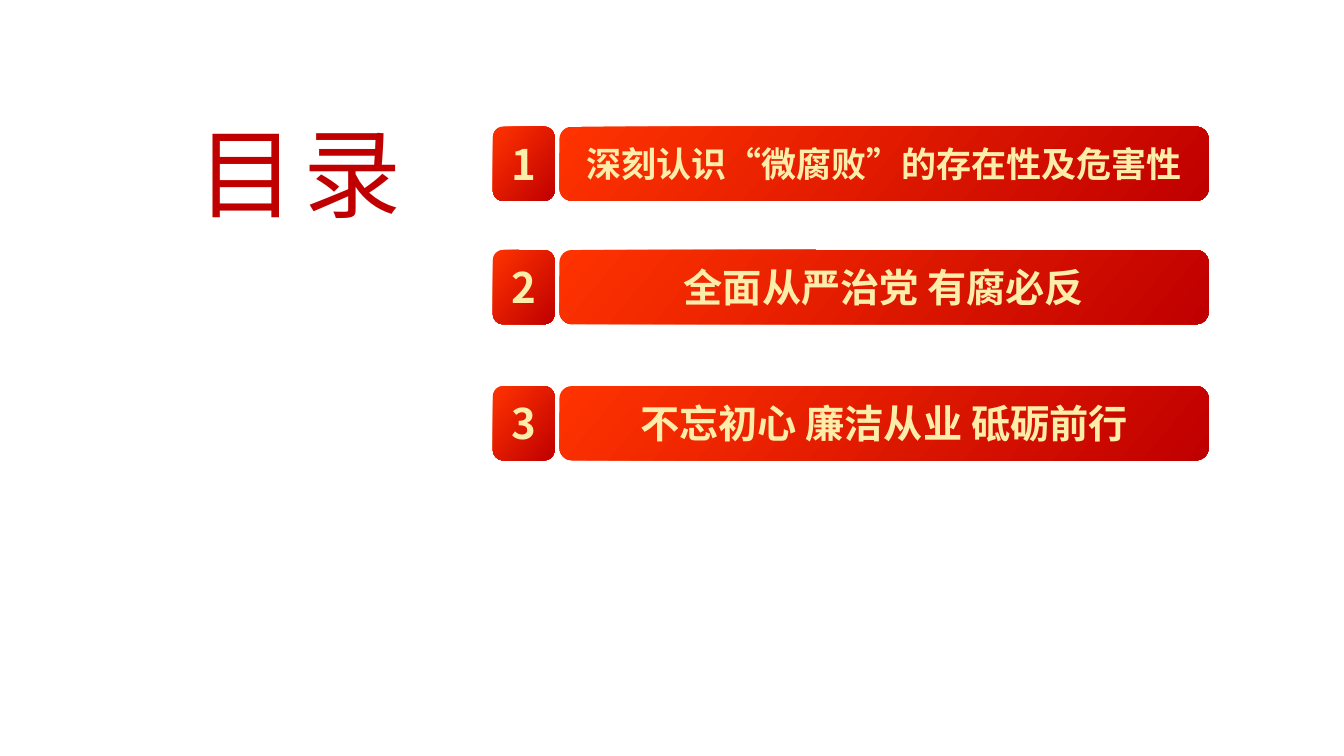
import pptx
import pptx.util
import pptx.dml.color
import pptx.enum.shapes
import pptx.enum.text
import pptx.oxml.ns
from lxml import etree

Pt = pptx.util.Pt
FONT = "Noto Sans CJK SC"


def color(value):
    return pptx.dml.color.RGBColor.from_string(value)


def format_text(paragraph, size, value, bold, alignment):
    paragraph.alignment = alignment
    font = paragraph.font
    font.size = Pt(size)
    font.bold = bold
    font.color.rgb = color(value)
    font.name = FONT
    properties = paragraph._p.pPr.find(pptx.oxml.ns.qn("a:defRPr"))
    etree.SubElement(properties, pptx.oxml.ns.qn("a:ea"), typeface=FONT)
    return properties


presentation = pptx.Presentation()
presentation.slide_width = Pt(960)
presentation.slide_height = Pt(540)
slide = presentation.slides.add_slide(presentation.slide_layouts[5])

title = slide.shapes.title
title.left, title.top, title.width, title.height = Pt(134), Pt(77), Pt(176.4), Pt(92.2)
title.text_frame.text = "目录"
title.text_frame.word_wrap = True
title.text_frame.auto_size = pptx.enum.text.MSO_AUTO_SIZE.NONE
title.text_frame.vertical_anchor = pptx.enum.text.MSO_ANCHOR.TOP
title_properties = format_text(
    title.text_frame.paragraphs[0], 70, "C00000", False, pptx.enum.text.PP_ALIGN.LEFT
)
title_properties.set("spc", "600")

chapters = [
    (90.5, "深刻认识“微腐败”的存在性及危害性", 25),
    (178.6, "全面从严治党 有腐必反", 28),
    (275.8, "不忘初心 廉洁从业 砥砺前行", 28),
]
for number, (top, heading, heading_size) in enumerate(chapters, 1):
    for left, width, text, size in [
        (399.6, 463.7, heading, heading_size),
        (352.1, 44, str(number), 30),
    ]:
        shape = slide.shapes.add_shape(
            pptx.enum.shapes.MSO_SHAPE.ROUNDED_RECTANGLE,
            Pt(left), Pt(top), Pt(width), Pt(53),
        )
        shape.shadow.inherit = False
        shape.line.fill.background()
        shape.fill.gradient()
        shape.fill.gradient_angle = 320
        for stop, value, position in zip(shape.fill.gradient_stops, ["FF3300", "C00000"], [0, 1]):
            stop.color.rgb = color(value)
            stop.position = position
        shape.text_frame.text = text
        shape.text_frame.word_wrap = True
        shape.text_frame.vertical_anchor = pptx.enum.text.MSO_ANCHOR.MIDDLE
        format_text(
            shape.text_frame.paragraphs[0], size, "FDEDAA", True, pptx.enum.text.PP_ALIGN.CENTER
        )

presentation.save("out.pptx")
